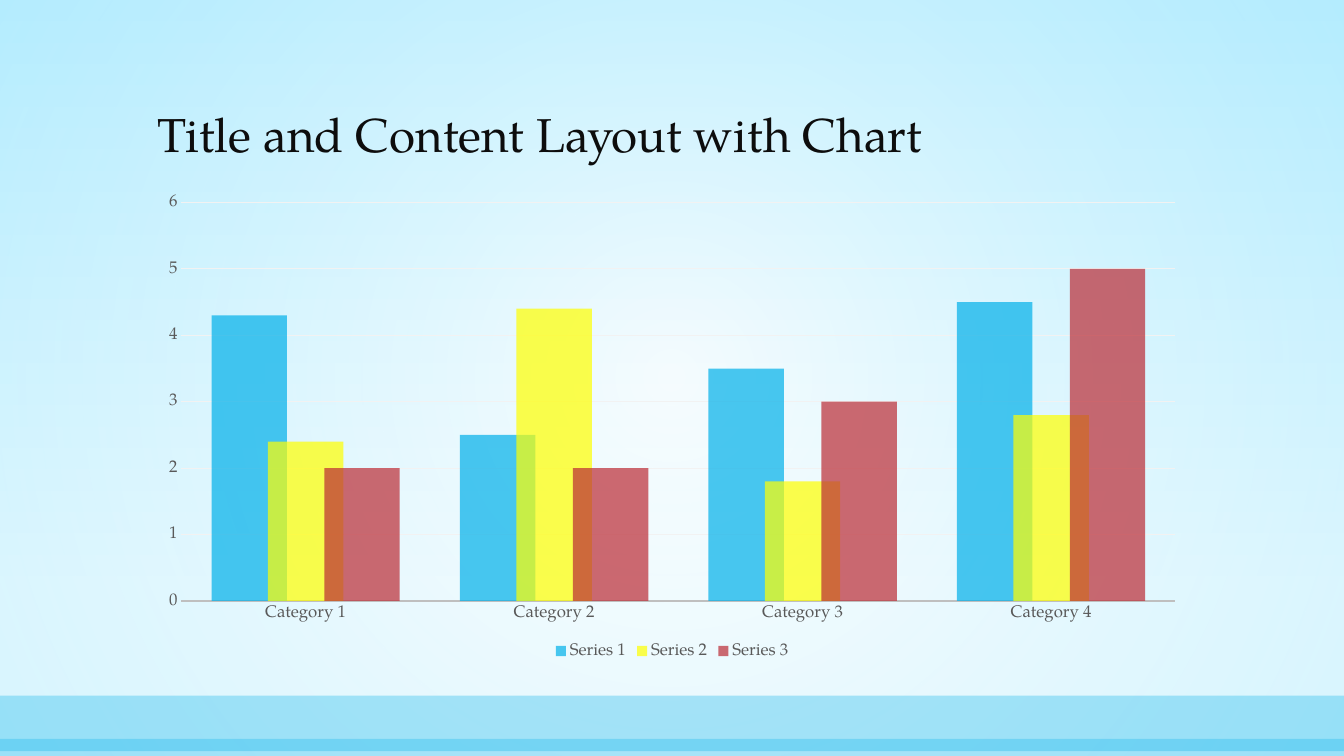
from lxml.etree import SubElement
from pptx import Presentation
from pptx.chart.data import CategoryChartData
from pptx.dml.color import RGBColor
from pptx.enum.chart import XL_CHART_TYPE, XL_LEGEND_POSITION, XL_TICK_MARK
from pptx.enum.shapes import MSO_SHAPE
from pptx.enum.text import MSO_ANCHOR
from pptx.oxml.ns import qn
from pptx.util import Cm, Pt

FONT = "TeX Gyre Pagella"
WHITE = RGBColor(0xFF, 0xFF, 0xFF)
PALE_BLUE = RGBColor(0xC8, 0xF1, 0xFF)
SKY_BLUE = RGBColor(0x91, 0xE4, 0xFF)
BLUE = RGBColor(0x00, 0xB0, 0xEA)
YELLOW = RGBColor(0xFF, 0xFF, 0x00)
RED = RGBColor(0xBB, 0x2B, 0x35)
INK = RGBColor(0x0D, 0x0D, 0x0D)
GREY = RGBColor(0x59, 0x59, 0x59)
AXIS_GREY = RGBColor(0xBF, 0xBF, 0xBF)
GRID_GREY = RGBColor(0xF2, 0xF2, 0xF2)

WIDTH, HEIGHT = Cm(33.87), Cm(19.05)
CONTENT_LEFT, CONTENT_WIDTH = Cm(3.73), Cm(26.42)

CATEGORIES = [f"Category {n}" for n in range(1, 5)]
SERIES = [
    ("Series 1", (4.3, 2.5, 3.5, 4.5), BLUE),
    ("Series 2", (2.4, 4.4, 1.8, 2.8), YELLOW),
    ("Series 3", (2, 2, 3, 5), RED),
]


def set_alpha(color, percent):
    """Set the opacity of an a:srgbClr element."""
    SubElement(color, qn("a:alpha"), val=str(percent * 1000))


def solid_fill(fill, element, color, opacity):
    """Fill with a translucent colour; element holds the fill's XML."""
    fill.solid()
    fill.fore_color.rgb = color
    set_alpha(element.find(".//" + qn("a:srgbClr")), opacity)


def gradient_fill(fill, element, stops, radial=False):
    """Fill with two (position, colour, opacity) stops, downwards or from the centre."""
    fill.gradient()
    fill.gradient_angle = 270
    grad = element.find(".//" + qn("a:gradFill"))
    for stop, (position, color, _) in zip(fill.gradient_stops, stops):
        stop.position = position
        stop.color.rgb = color
    for color, (_, _, opacity) in zip(grad.iter(qn("a:srgbClr")), stops):
        set_alpha(color, opacity)
    if radial:
        grad.remove(grad.find(qn("a:lin")))
        path = SubElement(grad, qn("a:path"), path="circle")
        SubElement(path, qn("a:fillToRect"), l="50000", t="50000", r="50000", b="50000")


def add_band(s, top, height):
    """Add a full-width rectangle without outline."""
    band = s.shapes.add_shape(MSO_SHAPE.RECTANGLE, 0, top, WIDTH, height)
    band.shadow.inherit = False
    band.line.fill.background()
    return band


def add_backdrop(s):
    gradient_fill(s.background.fill, s.element,
                  [(0, PALE_BLUE, 56), (0.79, WHITE, 100)])
    glow = add_band(s, 0, HEIGHT)
    gradient_fill(glow.fill, glow.element.spPr,
                  [(0, WHITE, 49), (1, SKY_BLUE, 35)], radial=True)
    for top, height, opacity in ((17.53, 1.4, 30), (18.62, 0.43, 28)):
        band = add_band(s, Cm(top), Cm(height))
        solid_fill(band.fill, band.element.spPr, BLUE, opacity)


def style_font(font, size, color):
    font.name = FONT
    font.size = Pt(size)
    font.color.rgb = color


def add_title(s, text):
    tf = s.shapes.add_textbox(CONTENT_LEFT, Cm(1.22), CONTENT_WIDTH, Cm(3.02)).text_frame
    tf.word_wrap = True
    tf.vertical_anchor = MSO_ANCHOR.BOTTOM
    p = tf.paragraphs[0]
    p.text = text
    p.line_spacing = 0.9
    style_font(p.font, 34, INK)


def style_line(line, color, width):
    line.color.rgb = color
    line.width = Pt(width)


def style_axes(chart):
    for axis in (chart.category_axis, chart.value_axis):
        axis.major_tick_mark = axis.minor_tick_mark = XL_TICK_MARK.NONE
        style_font(axis.tick_labels.font, 12, GREY)
    style_line(chart.category_axis.format.line, AXIS_GREY, 1.25)
    values = chart.value_axis
    values.minimum_scale, values.maximum_scale, values.major_unit = 0, 6, 1
    values.format.line.fill.background()
    style_line(values.major_gridlines.format.line, GRID_GREY, 0.75)


def add_column_chart(s):
    data = CategoryChartData()
    data.categories = CATEGORIES
    for name, values, _ in SERIES:
        data.add_series(name, values)
    chart = s.shapes.add_chart(XL_CHART_TYPE.COLUMN_CLUSTERED, CONTENT_LEFT, Cm(4.65),
                               CONTENT_WIDTH, Cm(12.07), data).chart
    style_font(chart.font, 12, GREY)
    chart.has_title = False
    chart.has_legend = True
    chart.legend.position = XL_LEGEND_POSITION.BOTTOM
    chart.legend.include_in_layout = False
    style_font(chart.legend.font, 12, GREY)
    style_axes(chart)
    plot = chart.plots[0]
    plot.vary_by_categories = False
    plot.gap_width, plot.overlap = 80, 25
    for series, (_, _, color) in zip(plot.series, SERIES):
        series.invert_if_negative = False
        fill = series.format.fill
        solid_fill(fill, series.format.element.spPr if hasattr(series.format, "element")
                   else series._element.spPr, color, 70)


def main():
    prs = Presentation()
    prs.slide_width, prs.slide_height = WIDTH, HEIGHT
    s = prs.slides.add_slide(prs.slide_layouts[6])
    add_backdrop(s)
    add_title(s, "Title and Content Layout with Chart")
    add_column_chart(s)
    prs.save("out.pptx")


if __name__ == "__main__":
    main()
